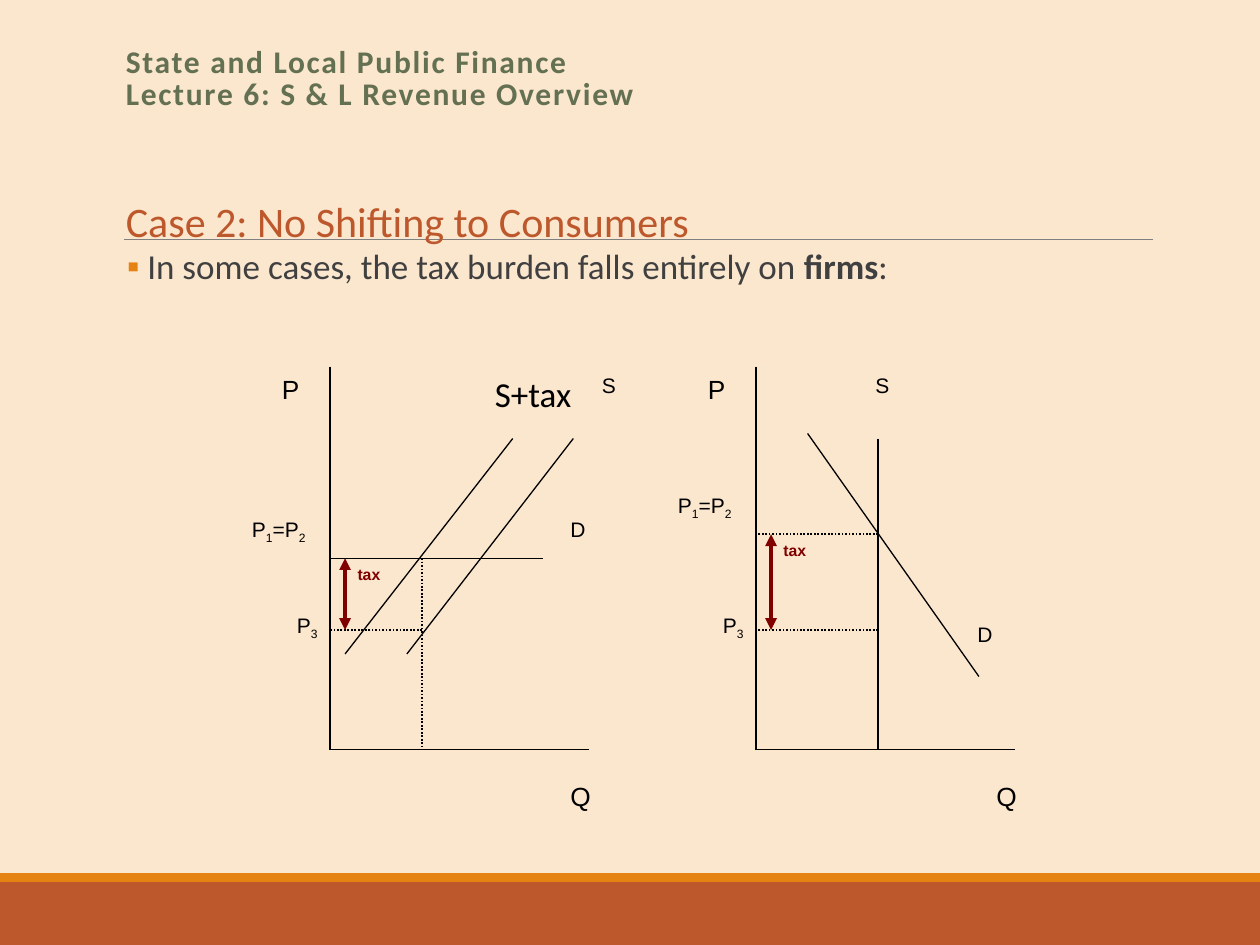
"""Build a slide with two supply-and-demand graphs in which firms bear the whole tax."""
from dataclasses import dataclass

from lxml import etree
from pptx import Presentation
from pptx import util as u
from pptx.dml.color import RGBColor
from pptx.enum import dml, shapes
from pptx.oxml import ns

CREAM = RGBColor(0xFB, 0xE6, 0xCE)
RUST = RGBColor(0xBD, 0x58, 0x2C)
ORANGE = RGBColor(0xE4, 0x83, 0x12)
GREEN = RGBColor(0x63, 0x70, 0x52)
GRAY = RGBColor(0x80, 0x80, 0x80)
CHARCOAL = RGBColor(0x40, 0x40, 0x40)
BLACK = RGBColor(0, 0, 0)
MAROON = RGBColor(0x80, 0, 0)

AXIS_TOP, AXIS_BOTTOM, AXIS_LENGTH = 209.5, 428.4, 148
NET_PRICE = 360


@dataclass
class Label:
    text: str
    x: float
    y: float
    w: float = 43.2
    h: float = 41
    size: float = 12
    font: str = "Arial"
    color: RGBColor = BLACK
    bold: bool = False


@dataclass
class Line:
    x1: float
    y1: float
    x2: float
    y2: float
    color: RGBColor = BLACK
    width: float = 0.75
    dotted: bool = False
    arrows: bool = False


@dataclass
class Graph:
    left: float
    price: float
    quantity: float
    lines: list[Line]
    labels: list[Label]


GRAPHS = [
    Graph(188.6, 319, 52.6,
          [Line(0, 319, 121.7, 319),
           Line(43.9, 373.7, 139, 250.6),
           Line(8.6, 373.7, 104.4, 250.6),
           Line(52.6, 319, 52.6, AXIS_BOTTOM, width=1, dotted=True)],
          [Label("S", 148.3, AXIS_TOP),
           Label("S+tax", 87.1, AXIS_TOP, 60.5, size=20, font="Calibri"),
           Label("D", 130.3, 291.6)]),
    Graph(432, 305.3, 69.8,
          [Line(69.8, 250.6, 69.8, AXIS_BOTTOM),
           Line(29.5, 247.7, 127.4, 386.6),
           Line(69.8, 305.3, 0, 305.3, width=1, dotted=True)],
          [Label("S", 61.2, AXIS_TOP), Label("D", 119.5, 351.4)]),
]


def add_bar(s, y: float, h: float, color: RGBColor) -> None:
    sp = s.shapes.add_shape(shapes.MSO_SHAPE.RECTANGLE, 0, u.Pt(y), u.Pt(720), u.Pt(h))
    sp.shadow.inherit = False
    sp.fill.solid()
    sp.fill.fore_color.rgb = color
    sp.line.fill.background()


def add_line(s, line: Line, left: float = 0) -> None:
    cx = s.shapes.add_connector(
        shapes.MSO_CONNECTOR.STRAIGHT,
        u.Pt(left + line.x1), u.Pt(line.y1), u.Pt(left + line.x2), u.Pt(line.y2))
    cx.line.color.rgb = line.color
    cx.line.width = u.Pt(line.width)
    if line.dotted:
        cx.line.dash_style = dml.MSO_LINE.ROUND_DOT
    if line.arrows:
        ln = cx.line._get_or_add_ln()
        for end in ("a:headEnd", "a:tailEnd"):
            etree.SubElement(ln, ns.qn(end), type="triangle")
    etree.SubElement(cx._element.spPr, ns.qn("a:effectLst"))


def add_label(s, label: Label, left: float = 0):
    """Add a text box; a digit after an underscore becomes a subscript."""
    sp = s.shapes.add_textbox(u.Pt(left + label.x), u.Pt(label.y), u.Pt(label.w), u.Pt(label.h))
    tf = sp.text_frame
    tf.word_wrap = True
    p = tf.paragraphs[0]
    first, *parts = label.text.split("_")
    p.text = first
    for part in parts:
        sub = p.add_run()
        sub.text = part[0]
        sub.font._element.set("baseline", "-25000")
        if part[1:]:
            p.add_run().text = part[1:]
    for r in p.runs:
        r.font.name = label.font
        r.font.size = u.Pt(label.size)
        r.font.bold = label.bold
        r.font.color.rgb = label.color
    return tf


def add_graph(s, graph: Graph) -> None:
    lines = [
        Line(0, AXIS_TOP, 0, AXIS_BOTTOM),
        Line(0, AXIS_BOTTOM, AXIS_LENGTH, AXIS_BOTTOM),
        *graph.lines,
        Line(graph.quantity, NET_PRICE, 0, NET_PRICE, width=1, dotted=True),
        Line(8.6, graph.price, 8.6, NET_PRICE, MAROON, 2.25, arrows=True),
    ]
    labels = [
        Label("P", -34.6, AXIS_TOP, 26, 54.7, 15),
        Label("Q", 130.3, 442.1, 26, 54.7, 15),
        Label("P_1=P_2", -51.8, graph.price - 27.4, 87),
        Label("P_3", -26, NET_PRICE - 13.7),
        Label("tax", 8.6, graph.price, 34.6, size=9, color=MAROON, bold=True),
        *graph.labels,
    ]
    for line in lines:
        add_line(s, line, graph.left)
    for label in labels:
        add_label(s, label, graph.left)


def add_statement(s) -> None:
    tf = add_label(s, Label("In some cases, the tax burden falls entirely on ",
                            72.7, 139, 490.3, 41, 20, "Calibri", CHARCOAL))
    tf.margin_left = tf.margin_right = 0
    p = tf.paragraphs[0]
    for words, bold in (("firms", True), (":", False)):
        r = p.add_run()
        r.text = words
        r.font.name, r.font.size, r.font.bold = "Calibri", u.Pt(20), bold
        r.font.color.rgb = CHARCOAL
    p.line_spacing, p.space_before, p.space_after = 0.9, u.Pt(6.8), u.Pt(1.1)
    pPr = p._p.get_or_add_pPr()
    pPr.set("marL", str(u.Pt(11.5)))
    pPr.set("indent", str(-u.Pt(11.5)))
    color = etree.SubElement(pPr, ns.qn("a:buClr"))
    etree.SubElement(color, ns.qn("a:srgbClr"), val=str(ORANGE))
    etree.SubElement(pPr, ns.qn("a:buFont"), typeface="Calibri")
    etree.SubElement(pPr, ns.qn("a:buChar"), char="▪")


def add_course_title(s) -> None:
    tf = add_label(s, Label("State and Local Public Finance\vLecture 6: S & L Revenue Overview",
                            64.8, 23.8, 594, 46.8, 18, "Calibri", GREEN, True))
    p = tf.paragraphs[0]
    p.line_spacing = 0.85
    for r in p.runs:
        r.font._element.set("spc", "100")


def main() -> None:
    prs = Presentation()
    prs.slide_width, prs.slide_height = u.Pt(720), u.Pt(540)
    s = prs.slides.add_slide(prs.slide_layouts[6])
    s.background.fill.solid()
    s.background.fill.fore_color.rgb = CREAM
    add_bar(s, 504, 36, RUST)
    add_bar(s, 499, 5, ORANGE)
    add_line(s, Line(70.6, 136.8, 658.8, 136.8, GRAY, 0.5))
    add_statement(s)
    for graph in GRAPHS:
        add_graph(s, graph)
    add_course_title(s)
    add_label(s, Label("Case 2: No Shifting to Consumers",
                       64.8, 108, 346.3, 36, 24, "Calibri", RUST))
    prs.save("out.pptx")


if __name__ == "__main__":
    main()
